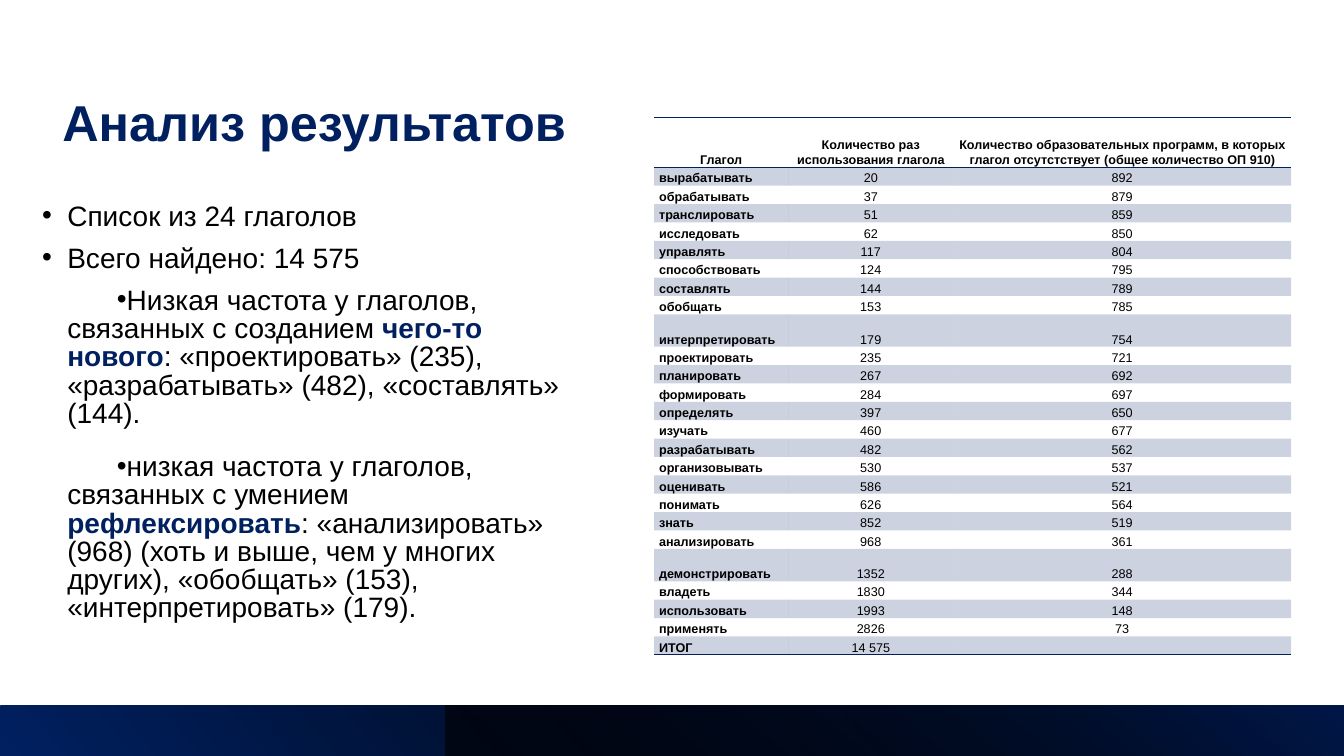
from lxml.etree import SubElement
from pptx import Presentation
from pptx.dml.color import RGBColor
from pptx.enum.shapes import MSO_SHAPE
from pptx.enum.text import MSO_ANCHOR, PP_ALIGN
from pptx.oxml import parse_xml
from pptx.oxml.ns import nsdecls, qn
from pptx.util import Pt

COLORS = {"navy": "002060", "black": "000000", "deep": "001848"}
FONT = "Arial"
TITLE = "Анализ результатов"
# Each paragraph: kind, then (text, highlighted) pieces
BODY = [
    ("item", [("Список из 24 глаголов", False)]),
    ("item", [("Всего найдено: 14 575", False)]),
    ("note", [("Низкая частота у глаголов, связанных с созданием ", False),
              ("чего-то нового", True),
              (": «проектировать» (235), «разрабатывать» (482), «составлять» (144).", False)]),
    ("note", [("низкая частота у глаголов, связанных с умением ", False),
              ("рефлексировать", True),
              (": «анализировать» (968) (хоть и выше, чем у многих других), "
               "«обобщать» (153), «интерпретировать» (179).", False)]),
]
KINDS = {"item": {"first": -18, "after": 0}, "note": {"first": 35.43, "after": 8}}
ROWS = [
    ("Глагол", "Количество раз использования глагола",
     "Количество образовательных программ, в которых глагол отсутстствует "
     "(общее количество ОП 910)"),
    ("вырабатывать", "20", "892"),
    ("обрабатывать", "37", "879"),
    ("транслировать", "51", "859"),
    ("исследовать", "62", "850"),
    ("управлять", "117", "804"),
    ("способствовать", "124", "795"),
    ("составлять", "144", "789"),
    ("обобщать", "153", "785"),
    ("интерпретировать", "179", "754"),
    ("проектировать", "235", "721"),
    ("планировать", "267", "692"),
    ("формировать", "284", "697"),
    ("определять", "397", "650"),
    ("изучать", "460", "677"),
    ("разрабатывать", "482", "562"),
    ("организовывать", "530", "537"),
    ("оценивать", "586", "521"),
    ("понимать", "626", "564"),
    ("знать", "852", "519"),
    ("анализировать", "968", "361"),
    ("демонстрировать", "1352", "288"),
    ("владеть", "1830", "344"),
    ("использовать", "1993", "148"),
    ("применять", "2826", "73"),
    ("ИТОГ", "14 575", ""),
]
WIDTHS = (95.8, 118, 241.2)
HEAD, ROW, TALL = 35.5, 13.15, 23.2
TALL_VERBS = {"интерпретировать", "демонстрировать"}
NO_GRID = "{2D5ABB26-0587-4C30-8999-92F81FD0307C}"
# Box, rotation, gradient angle, stops as (position, colour, opacity)
BANDS = [
    ((0, 504, 960, 36), 180, 40, [(0, "navy", 100), (78, "black", 100)]),
    ((318, 504, 642, 36), 0, 230, [(0, "black", 63), (100, "deep", 100)]),
]


def assign(obj, values):
    for name, value in values.items():
        setattr(obj, name, value)


def add_run(para, text, size, bold=False, color="black"):
    run = para.add_run()
    run.text = text
    assign(run.font, {"name": FONT, "size": Pt(size), "bold": bold})
    run.font.color.rgb = RGBColor.from_string(COLORS[color])


def add_box(slide, box, anchor):
    frame = slide.shapes.add_textbox(*map(Pt, box)).text_frame
    assign(frame, {"word_wrap": True, "vertical_anchor": anchor})
    return frame


def tint(color, alpha):
    return (f'<a:srgbClr val="{COLORS[color]}">'
            f'<a:alpha val="{alpha * 1000}"/></a:srgbClr>')


def add_band(slide, box, turn, angle, stops):
    band = slide.shapes.add_shape(MSO_SHAPE.RECTANGLE, *map(Pt, box))
    band.shadow.inherit = False
    band.line.fill.background()
    band.rotation = turn
    props = band.element.spPr
    props.find(qn("a:xfrm")).set("flipH", "1")
    marks = "".join(f'<a:gs pos="{pos * 1000}">{tint(color, alpha)}</a:gs>'
                    for pos, color, alpha in stops)
    props.find(qn("a:prstGeom")).addnext(parse_xml(
        f'<a:gradFill {nsdecls("a")} rotWithShape="1"><a:gsLst>{marks}</a:gsLst>'
        f'<a:lin ang="{angle * 60000}" scaled="0"/></a:gradFill>'))


def add_body(slide):
    frame = add_box(slide, (23, 141.8, 406.8, 315.4), MSO_ANCHOR.TOP)
    for i, (kind, parts) in enumerate(BODY):
        para = frame.add_paragraph() if i else frame.paragraphs[0]
        look = KINDS[kind]
        assign(para, {"line_spacing": 0.84, "space_before": Pt(10),
                      "space_after": Pt(look["after"])})
        props = para._p.get_or_add_pPr()
        props.set("marL", str(Pt(18)))
        props.set("indent", str(Pt(look["first"])))
        SubElement(props, qn("a:buFont")).set("typeface", FONT)
        SubElement(props, qn("a:buChar")).set("char", "•")
        for text, key in parts:
            add_run(para, text, 20, key, "navy" if key else "black")


def style_cell(cell, row, sides):
    """Tint odd rows, then draw the given border sides."""
    cell.fill.background()
    props = cell._tc.get_or_add_tcPr()
    if row % 2:
        props.remove(props.find(qn("a:noFill")))
        props.append(parse_xml(
            f'<a:solidFill {nsdecls("a")}>{tint("navy", 20)}</a:solidFill>'))
    for i, side in enumerate(sides):
        props.insert(i, parse_xml(
            f'<a:ln{side} {nsdecls("a")} w="{Pt(1)}"><a:solidFill>'
            f'{tint("navy", 100)}</a:solidFill></a:ln{side}>'))


def add_verbs(slide):
    heights = [HEAD] + [TALL if row[0] in TALL_VERBS else ROW for row in ROWS[1:]]
    frame = slide.shapes.add_table(len(ROWS), len(WIDTHS), Pt(467.2), Pt(84),
                                   Pt(sum(WIDTHS)), Pt(sum(heights)))
    table = frame.table
    assign(table, {"first_row": False, "horz_banding": False})
    table._tbl.tblPr.find(qn("a:tableStyleId")).text = NO_GRID
    for col, width in zip(table.columns, WIDTHS):
        col.width = Pt(width)
    for r, (row, height) in enumerate(zip(ROWS, heights)):
        table.rows[r].height = Pt(height)
        sides = {0: "TB", len(ROWS) - 1: "B"}.get(r, "")
        for c, text in enumerate(row):
            cell = table.cell(r, c)
            assign(cell, {"margin_left": Pt(3.6), "margin_right": Pt(3.6),
                          "margin_top": 0, "margin_bottom": 0,
                          "vertical_anchor": MSO_ANCHOR.BOTTOM})
            style_cell(cell, r, sides)
            para = cell.text_frame.paragraphs[0]
            assign(para, {"line_spacing": 1.07, "space_after": Pt(8),
                          "alignment": PP_ALIGN.CENTER if c or not r else PP_ALIGN.LEFT})
            if text:
                add_run(para, text, 9, not (r and c))
            else:
                SubElement(para._p, qn("a:endParaRPr")).set("sz", "900")


def main():
    deck = Presentation()
    assign(deck, {"slide_width": Pt(960), "slide_height": Pt(540)})
    slide = deck.slides.add_slide(deck.slide_layouts[6])
    title = add_box(slide, (37.4, 40.3, 390.2, 72), MSO_ANCHOR.BOTTOM).paragraphs[0]
    title.line_spacing = 0.9
    add_run(title, TITLE, 36, True, "navy")
    add_body(slide)
    for band in BANDS:
        add_band(slide, *band)
    add_verbs(slide)
    deck.save("out.pptx")


if __name__ == "__main__":
    main()
